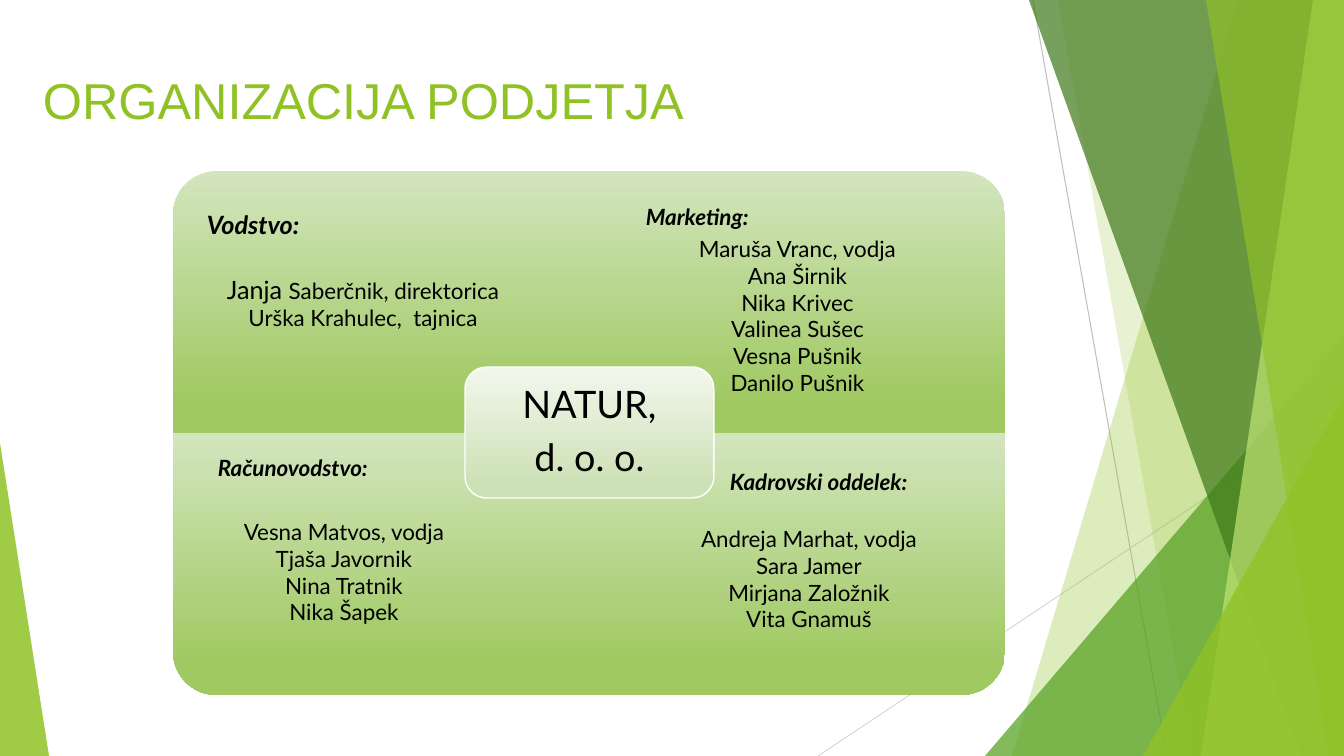
"""Build the company organisation slide with four departments around a centre box."""
from lxml.etree import SubElement
from pptx import Presentation
from pptx.dml.color import RGBColor
from pptx.enum.shapes import MSO_CONNECTOR, MSO_SHAPE
from pptx.enum.text import MSO_ANCHOR, PP_ALIGN
from pptx.oxml.ns import qn
from pptx.util import Emu, Pt

WIDTH, HEIGHT = 1344, 756
SCALE = 914400 / 100.8

BLACK = RGBColor(0x00, 0x00, 0x00)
WHITE = RGBColor(0xFF, 0xFF, 0xFF)
GREEN = RGBColor(0x90, 0xC2, 0x26)
MID_GREEN = RGBColor(0x54, 0xA0, 0x21)
DARK_GREEN = RGBColor(0x3F, 0x78, 0x19)
LIME = RGBColor(0xC0, 0xE4, 0x74)
QUADRANT_COLOURS = (RGBColor(0xD3, 0xE5, 0xBE), RGBColor(0xA0, 0xC9, 0x62))
CENTRE_COLOURS = (RGBColor(0xF2, 0xF7, 0xED), RGBColor(0xCD, 0xE1, 0xB7))

LINES = [
    ((1033, 0, 1167, 756), RGBColor(0xBF, 0xBF, 0xBF)),
    ((1344, 406, 818, 756), RGBColor(0xD9, 0xD9, 0xD9)),
]
# kind, geometry, colour, opacity
DECORATIONS = [
    ("band", (1238, 1012), GREEN, 30),
    ("band", (1058, 1192), GREEN, 20),
    ("triangle", (985, 336, 359, 420, 1), MID_GREEN, 72),
    ("band", (1029, 1301), DARK_GREEN, 70),
    ("band", (1313, 1201), LIME, 70),
    ("band", (1206, 1329), GREEN, 65),
    ("triangle", (1143, 396, 201, 360, 1), GREEN, 80),
    ("triangle", (0, 443, 49, 313, 0), GREEN, 85),
]

TITLE = "ORGANIZACIJA PODJETJA"
COMPANY = ["NATUR,", "d. o. o."]
HEADINGS = [
    ("Marketing:", (636, 198, 272, 37), 16),
    ("Kadrovski oddelek:", (720, 463, 264, 37), 16),
    ("Vodstvo:", (197, 204, 272, 40), 18),
    ("Računovodstvo:", (208, 449, 272, 37), 16),
]
MEMBERS = [
    ((185, 269, 356, 102),
     [[("Janja ", 18), ("Saberčnik, direktorica", 16)], "Urška Krahulec,  tajnica"]),
    ((670, 230, 255, 200),
     ["Maruša Vranc, vodja", "Ana Širnik", "Nika Krivec", "Valinea Sušec",
      "Vesna Pušnik", "Danilo Pušnik"]),
    ((219, 513, 250, 119),
     ["Vesna Matvos, vodja", "Tjaša Javornik", "Nina Tratnik", "Nika Šapek"]),
    ((675, 520, 268, 119),
     ["Andreja Marhat, vodja", "Sara Jamer", "Mirjana Založnik", "Vita Gnamuš"]),
]

GRID_LEFT, GRID_TOP, CELL_WIDTH, CELL_HEIGHT = 173, 171, 416, 262
QUADRANTS = [(0, 0, 270), (1, 0, 0), (0, 1, 180), (1, 1, 90)]
CENTRE_BOX = (465, 367, 249, 131)


def px(*lengths):
    return [Emu(round(length * SCALE)) for length in lengths]


def add_line(shapes, ends, colour):
    connector = shapes.add_connector(MSO_CONNECTOR.STRAIGHT, *px(*ends))
    connector.line.color.rgb = colour
    connector.line.width = Pt(0.75)
    SubElement(connector._element.spPr, qn("a:effectLst"))


def add_decoration(shapes, kind, geometry, colour, opacity):
    if kind == "band":
        top_x, bottom_x = geometry
        builder = shapes.build_freeform(top_x, 0, SCALE)
        builder.add_line_segments([(WIDTH, 0), (WIDTH, HEIGHT), (bottom_x, HEIGHT)], close=True)
        shape = builder.convert_to_shape()
    else:
        *box, apex = geometry
        shape = shapes.add_shape(MSO_SHAPE.ISOSCELES_TRIANGLE, *px(*box))
        shape.adjustments[0] = apex
    shape.shadow.inherit = False
    shape.line.fill.background()
    shape.fill.solid()
    shape.fill.fore_color.rgb = colour
    colour_element = shape._element.spPr.find(qn("a:solidFill"))[0]
    SubElement(colour_element, qn("a:alpha"), val=str(opacity * 1000))


def add_gradient_box(shapes, preset, box, colours, rotation=0):
    shape = shapes.add_shape(preset, *px(*box))
    shape.shadow.inherit = False
    shape.rotation = rotation
    shape.line.fill.background()
    shape.fill.gradient()
    shape.fill.gradient_angle = 270
    for stop, colour, position in zip(shape.fill.gradient_stops, colours, (0, 0.88)):
        stop.color.rgb = colour
        stop.position = position
    shape._element.spPr.find(qn("a:gradFill")).set("rotWithShape", "0")
    return shape


def add_quadrant(shapes, column, row, rotation):
    centre_x = GRID_LEFT + (column + 0.5) * CELL_WIDTH
    centre_y = GRID_TOP + (row + 0.5) * CELL_HEIGHT
    width, height = CELL_WIDTH, CELL_HEIGHT
    if rotation % 180:
        width, height = height, width
    box = (centre_x - width / 2, centre_y - height / 2, width, height)
    add_gradient_box(shapes, MSO_SHAPE.ROUND_1_RECTANGLE, box, QUADRANT_COLOURS, rotation)


def write_lines(frame, lines, size, font_name="Lato", colour=BLACK, centred=True, strong=False):
    frame.word_wrap = True
    for index, line in enumerate(lines):
        paragraph = frame.paragraphs[0] if index == 0 else frame.add_paragraph()
        paragraph.alignment = PP_ALIGN.CENTER if centred else PP_ALIGN.LEFT
        runs = [(line, None)] if isinstance(line, str) else line
        for text, run_size in runs:
            run = paragraph.add_run()
            run.text = text
            if run_size:
                run.font.size = Pt(run_size)
        font = paragraph.font
        font.name, font.size, font.color.rgb = font_name, Pt(size), colour
        font.bold = font.italic = strong


def add_text(shapes, box, lines, size, **style):
    write_lines(shapes.add_textbox(*px(*box)).text_frame, lines, size, **style)


def add_company(shapes):
    shape = add_gradient_box(shapes, MSO_SHAPE.ROUNDED_RECTANGLE, CENTRE_BOX, CENTRE_COLOURS)
    shape.line.color.rgb = WHITE
    shape.line.width = Pt(1)
    frame = shape.text_frame
    frame.vertical_anchor = MSO_ANCHOR.MIDDLE
    write_lines(frame, COMPANY, 27)
    for paragraph in frame.paragraphs:
        paragraph.line_spacing = 0.9
        paragraph.space_after = Pt(9)


def main():
    presentation = Presentation()
    presentation.slide_width, presentation.slide_height = px(WIDTH, HEIGHT)
    slide = presentation.slides.add_slide(presentation.slide_layouts[6])
    shapes = slide.shapes
    for ends, colour in LINES:
        add_line(shapes, ends, colour)
    for decoration in DECORATIONS:
        add_decoration(shapes, *decoration)
    add_text(shapes, (33, 64, 998, 145), [TITLE], 36,
             font_name="Arial", colour=GREEN, centred=False)
    for quadrant in QUADRANTS:
        add_quadrant(shapes, *quadrant)
    add_company(shapes)
    for heading, box, size in HEADINGS:
        add_text(shapes, box, [heading], size, centred=False, strong=True)
    for box, names in MEMBERS:
        add_text(shapes, box, names, 16)
    presentation.save("out.pptx")


if __name__ == "__main__":
    main()
